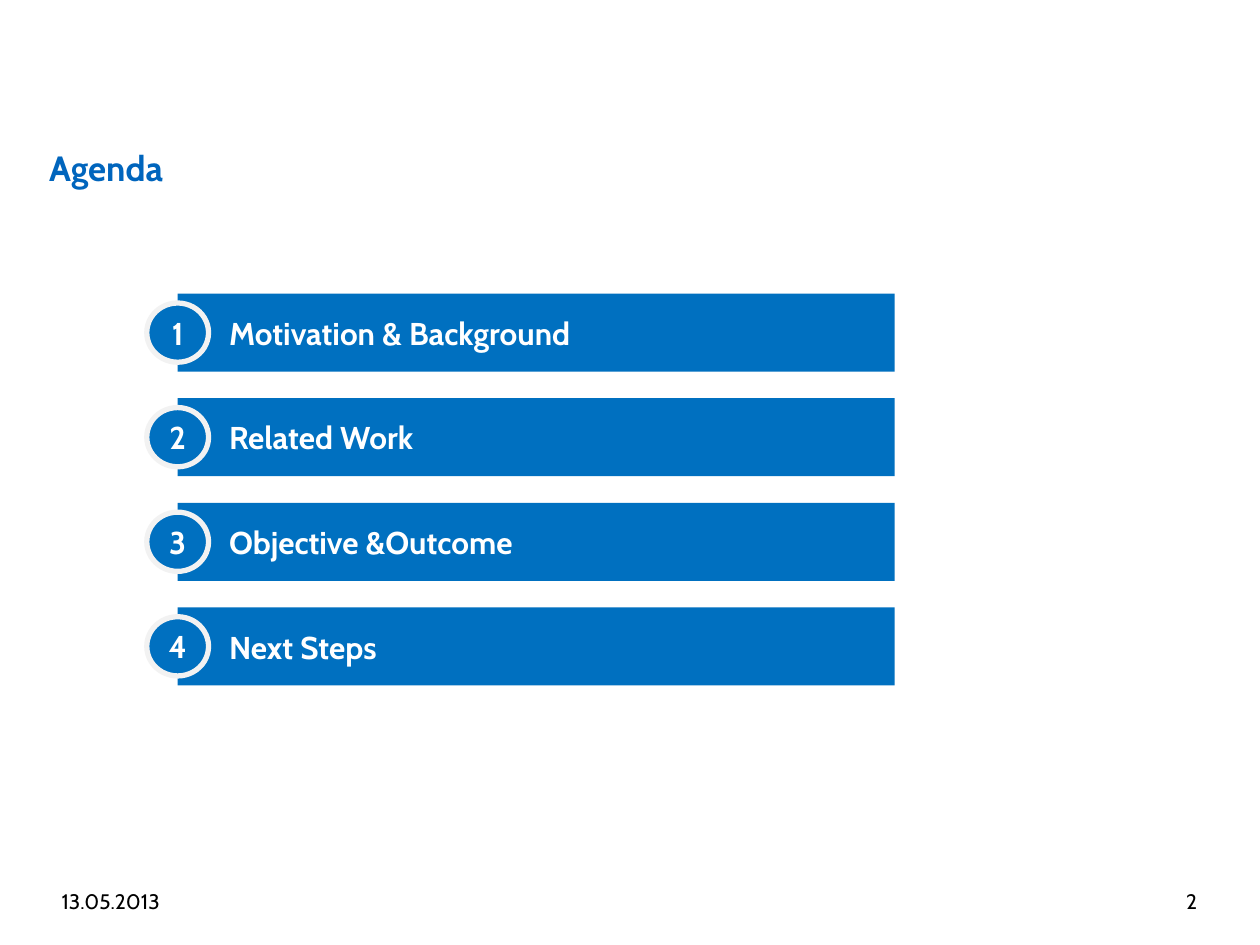
from dataclasses import dataclass

from pptx import Presentation, util as u
from pptx.dml.color import RGBColor
from pptx.enum import shapes, text


@dataclass(frozen=True)
class Theme:
    """Colours, type sizes and font of the deck."""
    font: str = "Cabin"
    title: str = "0065BD"
    bar: str = "0070C0"
    ring: str = "F2F2F2"
    light: str = "FFFFFF"
    dark: str = "000000"
    title_size: int = 20
    item_size: int = 18
    footer_size: int = 12


THEME = Theme()
TOPICS = ["Motivation & Background", "Related Work", "Objective &Outcome", "Next Steps"]


def inches(*lengths):
    """Turn lengths in inches into slide units."""
    return [u.Inches(length) for length in lengths]


def write(shape, words, size, colour, bold=False, align=text.PP_ALIGN.LEFT,
          anchor=text.MSO_ANCHOR.MIDDLE):
    """Put one formatted run in a shape and return its paragraph."""
    frame = shape.text_frame
    frame.word_wrap = True
    frame.auto_size = text.MSO_AUTO_SIZE.NONE
    frame.vertical_anchor = anchor
    para = frame.paragraphs[0]
    para.alignment = align
    span = para.add_run()
    span.text = words
    span.font.name = THEME.font
    span.font.size = u.Pt(size)
    span.font.bold = bold
    span.font.color.rgb = RGBColor.from_string(colour)
    return para


def clear_insets(shape):
    """Remove the inner margins of a shape."""
    frame = shape.text_frame
    frame.margin_left = frame.margin_right = frame.margin_top = frame.margin_bottom = 0


def add_title(page, words, box):
    """Place and format the title placeholder."""
    title = page.shapes.title
    title.left, title.top, title.width, title.height = inches(*box)
    clear_insets(title)
    para = write(title, words, THEME.title_size, THEME.title, True,
                 anchor=text.MSO_ANCHOR.TOP)
    para.line_spacing = 1.25


def add_filled(group, kind, box):
    """Add a flat shape in the bar colour to a group."""
    shape = group.shapes.add_shape(kind, *inches(*box))
    shape.shadow.inherit = False
    shape.fill.solid()
    shape.fill.fore_color.rgb = RGBColor.from_string(THEME.bar)
    shape.line.fill.background()
    return shape


def add_topic(page, number, words, box):
    """Draw one agenda bar with its number badge on the left edge."""
    left, top, width, height = box
    badge_width, badge_height = 0.49, 0.47
    group = page.shapes.add_group_shape()

    bar = add_filled(group, shapes.MSO_SHAPE.RECTANGLE, box)
    para = write(bar, words, THEME.item_size, THEME.light, True)
    para._p.get_or_add_pPr().set("marL", str(u.Inches(0.31)))

    badge = add_filled(group, shapes.MSO_SHAPE.FLOWCHART_CONNECTOR,
                       (left - badge_width / 2, top + (height - badge_height) / 2,
                        badge_width, badge_height))
    badge.line.color.rgb = RGBColor.from_string(THEME.ring)
    badge.line.width = u.Pt(3)
    clear_insets(badge)
    write(badge, str(number), THEME.item_size, THEME.light, True, text.PP_ALIGN.CENTER)


def add_agenda(page, topics, box, bar_height):
    """Spread the topic bars evenly over the height of the box."""
    left, top, width, height = box
    pitch = (height - bar_height) / (len(topics) - 1)
    for row, words in enumerate(topics):
        add_topic(page, row + 1, words, (left, top + row * pitch, width, bar_height))


def add_footer(page, date, number, box):
    """Write the date at the left end and the page number at the right end."""
    left, top, width, height = box
    part = 2.33
    for words, start, align in ((date, left, text.PP_ALIGN.LEFT),
                                (number, left + width - part, text.PP_ALIGN.RIGHT)):
        label = page.shapes.add_textbox(*inches(start, top, part, height))
        write(label, words, THEME.footer_size, THEME.dark, align=align)


def main():
    """Build the agenda slide and save the deck."""
    deck = Presentation()
    deck.slide_width, deck.slide_height = inches(10, 7.5)
    page = deck.slides.add_slide(deck.slide_layouts[5])
    add_title(page, "Agenda", (0.39, 1.08, 8.12, 0.39))
    add_footer(page, "13.05.2013", "2", (0.39, 6.95, 9.21, 0.4))
    add_agenda(page, TOPICS, (1.41, 2.33, 5.69, 3.11), 0.62)
    deck.save("out.pptx")


if __name__ == "__main__":
    main()
